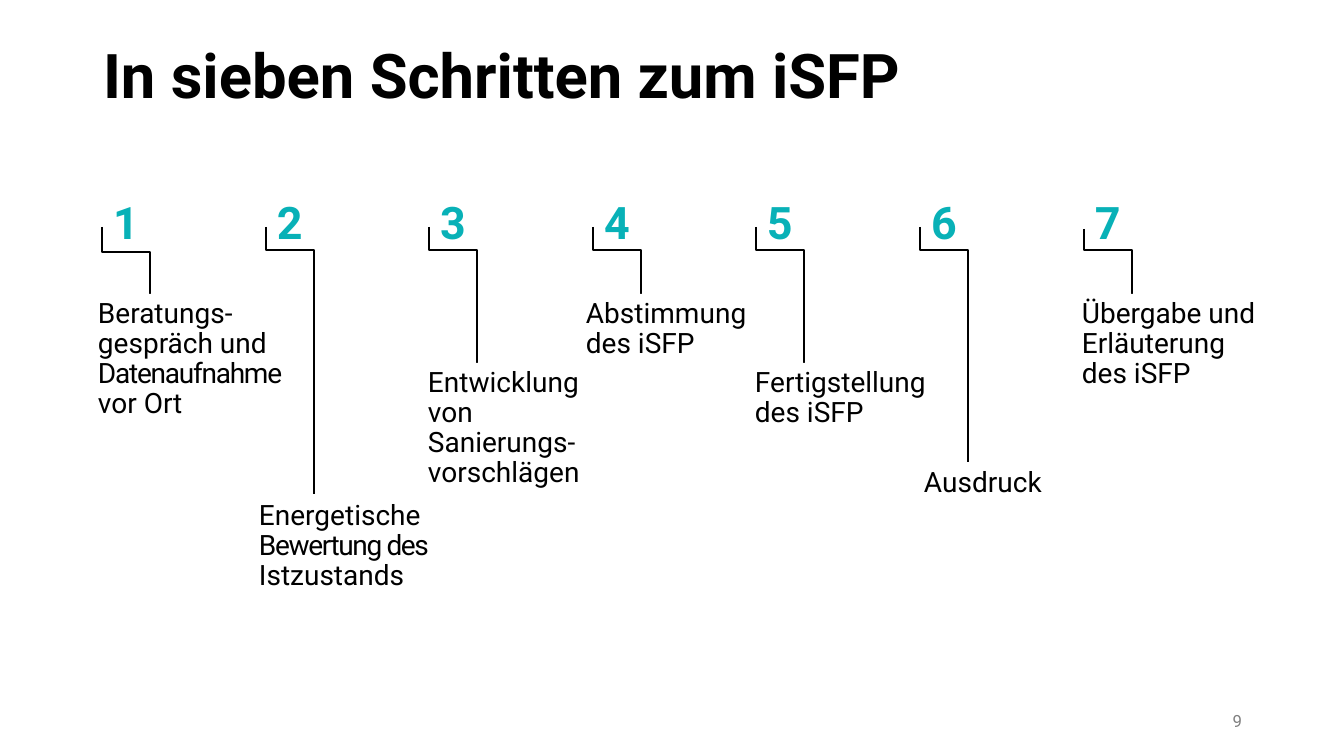
"""Builds the slide with the seven steps to the iSFP."""
from lxml.etree import SubElement
from pptx import Presentation
from pptx.dml.color import RGBColor
from pptx.enum.shapes import MSO_CONNECTOR as Link
from pptx.enum.text import MSO_ANCHOR as Anchor, MSO_AUTO_SIZE as Fit, PP_ALIGN as Align
from pptx.oxml.ns import qn
from pptx.util import Pt

PX = 914400 / 100.8
COLORS = {"text": "000000", "accent": "08B1B7", "page": "808080", "box": "FFFFFF"}
BREAK = ("\n", 0)
STEPS = [
    ((227, 252, 388), (94, 294, 204, 133),
     [("Beratungs-gespräch und ", 0), ("Datenaufnahme", -0.9), (" vor Ort", 0)]),
    ((227, 250, 494), (255, 496, 199, 146),
     [("Energetische ", 0), ("Bewertung des ", -1), ("Istzustands", 0)]),
    ((227, 250, 462), (424, 363, 199, 115),
     [("Entwicklung von Sanierungs-vorschlägen", 0)]),
    ((227, 250, 345), (582, 294, 199, 65), [("Abstimmung des iSFP", 0)]),
    ((227, 250, 397), (751, 363, 199, 65), [("Fertigstellung des iSFP", 0)]),
    ((227, 250, 462), (920, 463, 199, 65), [("Ausdruck", 0)]),
    ((229, 250, 340), (1078, 294, 199, 93),
     [("Übergabe und Erläuterung ", 0), BREAK, ("des iSFP", 0)]),
]


def px(n):
    return round(n * PX)


def rgb(name):
    return RGBColor.from_string(COLORS[name])


class Deck:
    font = "Roboto"

    def __init__(self, width, height):
        self.prs = Presentation()
        self.prs.slide_width, self.prs.slide_height = px(width), px(height)
        self.slide = self.prs.slides.add_slide(self.prs.slide_layouts[5])

    def add_runs(self, sp, runs, size, color, bold=False, align=Align.LEFT,
                 anchor=Anchor.TOP, spacing=0.9):
        tf = sp.text_frame
        tf.word_wrap, tf.auto_size, tf.vertical_anchor = True, Fit.NONE, anchor
        p = tf.paragraphs[0]
        p.alignment, p.line_spacing = align, spacing
        for text, tracking in runs:
            if text == "\n":
                p.add_line_break()
                continue
            r = p.add_run()
            r.text = text
            r.font.name, r.font.size, r.font.bold = self.font, Pt(size), bold
            r.font.color.rgb = rgb(color)
            if tracking:
                r._r.get_or_add_rPr().set("spc", str(round(tracking * 100)))

    def title(self, box, text):
        sp = self.slide.shapes.title
        sp.left, sp.top, sp.width, sp.height = map(px, box)
        self.add_runs(sp, [(text, 0)], 44, "text", bold=True)

    def text(self, box, runs, size, color, fill=None, inset=4, **style):
        sp = self.slide.shapes.add_textbox(*map(px, box))
        sp.text_frame.margin_left = px(inset)
        if fill:
            sp.fill.solid()
            sp.fill.fore_color.rgb = rgb(fill)
        self.add_runs(sp, runs, size, color, **style)

    def elbow(self, x, width, top, bend, bottom):
        cx, cy, half = x + width / 2, (top + bottom) / 2, (bottom - top) / 2
        line = self.slide.shapes.add_connector(
            Link.ELBOW, px(cx + half), px(cy - width / 2),
            px(cx - half), px(cy + width / 2))
        line.line.color.rgb, line.line.width = rgb("text"), Pt(1)
        props = line._element.spPr
        props.find(qn("a:xfrm")).set("rot", "16200000")
        guide = SubElement(props.find(qn("a:prstGeom")).find(qn("a:avLst")), qn("a:gd"))
        guide.set("name", "adj1")
        guide.set("fmla", f"val {round((bend - top) / (bottom - top) * 100000)}")
        SubElement(props, qn("a:effectLst"))


def main():
    deck = Deck(1344, 756)
    deck.title((93, 40, 1159, 100), "In sieben Schritten zum iSFP")
    for i, (levels, box, runs) in enumerate(STEPS):
        x = 109 + round(i * 163.6)
        deck.text((x, 196, 93, 47), [(str(i + 1), 0)], 32, "accent", bold=True)
        deck.elbow(x - 7, 48, *levels)
        deck.text(box, runs, 20, "text", fill="box")
    deck.text((950, 701, 302, 40), [("9", 0)], 12, "page", inset=10,
              align=Align.RIGHT, anchor=Anchor.MIDDLE, spacing=1.0)
    deck.prs.save("out.pptx")


if __name__ == "__main__":
    main()
